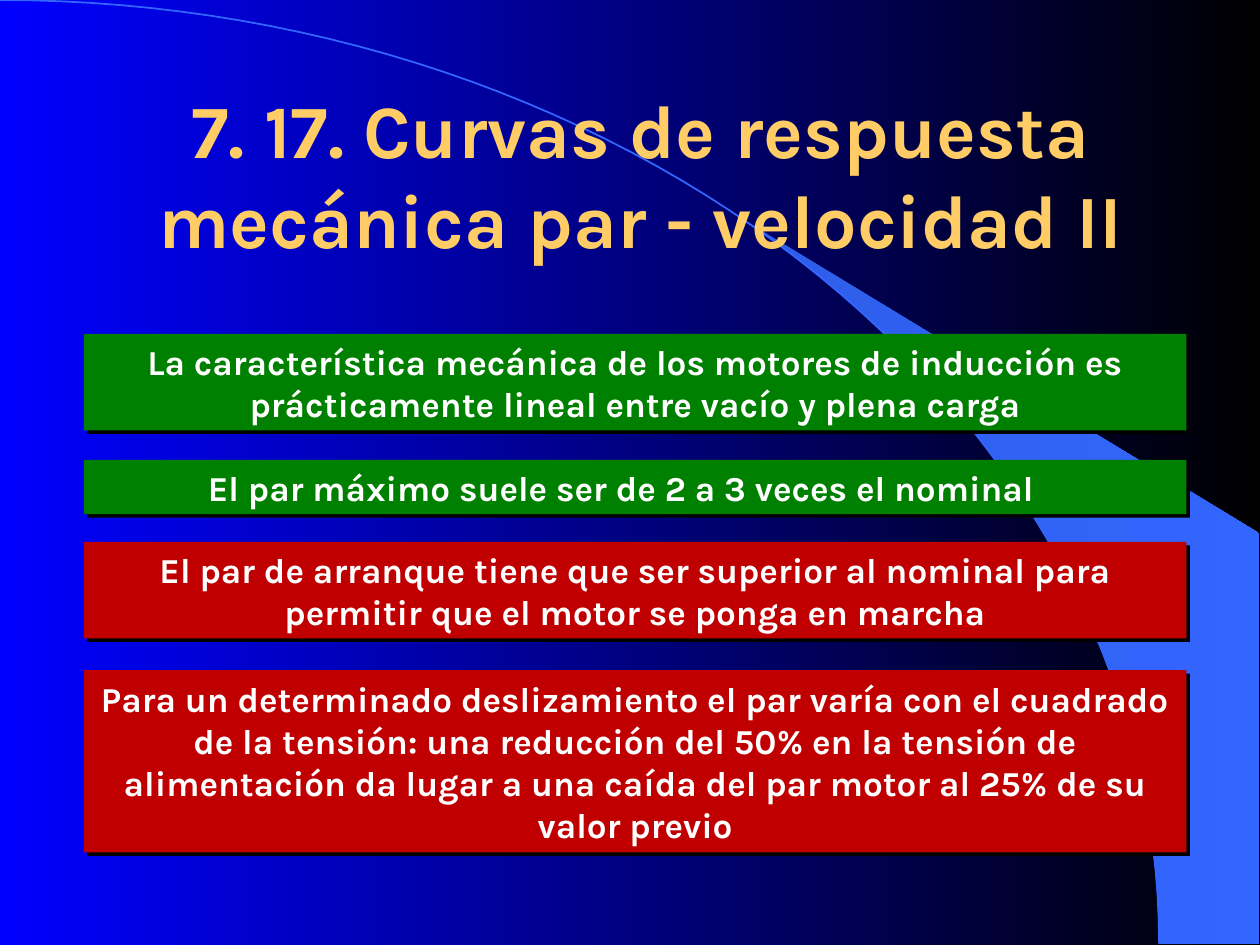
from math import cos, radians, sin

from lxml import etree
from pptx import Presentation
from pptx.dml.color import RGBColor
from pptx.enum.shapes import MSO_SHAPE
from pptx.enum.text import MSO_ANCHOR, PP_ALIGN
from pptx.oxml.ns import qn
from pptx.util import Pt

RECTANGLE = MSO_SHAPE.RECTANGLE
MIDDLE = MSO_ANCHOR.MIDDLE
CENTER = PP_ALIGN.CENTER

BLUE = RGBColor(0x00, 0x00, 0xFF)
BLACK = RGBColor(0x00, 0x00, 0x00)
WEDGE_BLUE = RGBColor(0x2E, 0x5D, 0xE7)
ARC_BLUE = RGBColor(0x33, 0x66, 0xFF)
GOLD = RGBColor(0xFF, 0xCC, 0x66)
GREEN = RGBColor(0x00, 0x80, 0x00)
RED = RGBColor(0xC0, 0x00, 0x00)
WHITE = RGBColor(0xFF, 0xFF, 0xFF)
FONT = "Karla"

TITLE = "7. 17. Curvas de respuesta mecánica par - velocidad II"
CARDS = [
    ("La característica mecánica de los motores de inducción es "
     "prácticamente lineal entre vacío y plena carga", GREEN, 190.8, 55.2, 7.2),
    ("El par máximo suele ser de 2 a 3 veces el nominal", GREEN, 262.8, 31, 23.2),
    ("El par de arranque tiene que ser superior al nominal para "
     "permitir que el motor se ponga en marcha", RED, 309.6, 55.2, 7.2),
    ("Para un determinado deslizamiento el par varía con el cuadrado de la "
     "tensión: una reducción del 50% en la tensión de alimentación da lugar a "
     "una caída del par motor al 25% de su valor previo", RED, 383, 104.2, 7.2),
]
CARD_LEFT, CARD_WIDTH = 48, 630
ARC_WIDTH, ARC_HEIGHT = 662.4, 539.3
WEDGE_START = 39.8
WEDGE_RIGHT, WEDGE_SIDE_TOP = 719.3, 304.6


def write_text(shape, text, size, color, right_margin=7.2):
    frame = shape.text_frame
    frame.word_wrap = True
    frame.vertical_anchor = MIDDLE
    frame.margin_left, frame.margin_right = Pt(7.2), Pt(right_margin)
    frame.margin_top = frame.margin_bottom = Pt(3.6)
    paragraph = frame.paragraphs[0]
    paragraph.alignment = CENTER
    run = paragraph.add_run()
    run.text = text
    run.font.name = FONT
    run.font.size = Pt(size)
    run.font.bold = True
    run.font.color.rgb = color


def fill_gradient(fill, first, last):
    fill.gradient()
    fill.gradient_angle = 0
    for stop, color in zip(fill.gradient_stops, (first, last)):
        stop.color.rgb = color


def arc_points(start, steps=60):
    angles = [radians(start + (90 - start) * step / steps) for step in range(steps + 1)]
    return [(ARC_WIDTH * sin(angle), ARC_HEIGHT * (1 - cos(angle))) for angle in angles]


def add_outline(slide, points, close):
    points = [(Pt(x), Pt(y)) for x, y in points]
    builder = slide.shapes.build_freeform(*points[0], scale=1.0)
    builder.add_line_segments(points[1:], close=close)
    shape = builder.convert_to_shape()
    shape.shadow.inherit = False
    return shape


def add_shadow(shape):
    shape.shadow.inherit = False
    effects = shape.element.spPr.find(qn("a:effectLst"))
    shadow = etree.SubElement(effects, qn("a:outerShdw"), dist=str(Pt(2.8)),
                              dir="2700000", algn="ctr", rotWithShape="0")
    etree.SubElement(shadow, qn("a:srgbClr"), val=str(BLACK))


def add_card(slide, text, color, top, height, right_margin):
    card = slide.shapes.add_shape(RECTANGLE, Pt(CARD_LEFT), Pt(top), Pt(CARD_WIDTH), Pt(height))
    card.fill.solid()
    card.fill.fore_color.rgb = color
    card.line.fill.background()
    add_shadow(card)
    write_text(card, text, 20, WHITE, right_margin)


def main():
    presentation = Presentation()
    presentation.slide_width, presentation.slide_height = Pt(720), Pt(540)
    slide = presentation.slides.add_slide(presentation.slide_layouts[5])
    fill_gradient(slide.background.fill, BLUE, BLACK)

    wedge_corners = [(WEDGE_RIGHT, ARC_HEIGHT), (WEDGE_RIGHT, WEDGE_SIDE_TOP)]
    wedge = add_outline(slide, arc_points(WEDGE_START) + wedge_corners, True)
    fill_gradient(wedge.fill, WEDGE_BLUE, ARC_BLUE)
    wedge.line.fill.background()

    arc = add_outline(slide, arc_points(0), False)
    arc.fill.background()
    arc.line.color.rgb = ARC_BLUE
    arc.line.width = Pt(1)

    title = slide.shapes.title
    title.left, title.top, title.width, title.height = Pt(6), Pt(54), Pt(720), Pt(90)
    write_text(title, TITLE, 43, GOLD)
    arc.element.addnext(title.element)

    for card in CARDS:
        add_card(slide, *card)
    presentation.save("out.pptx")


if __name__ == "__main__":
    main()
